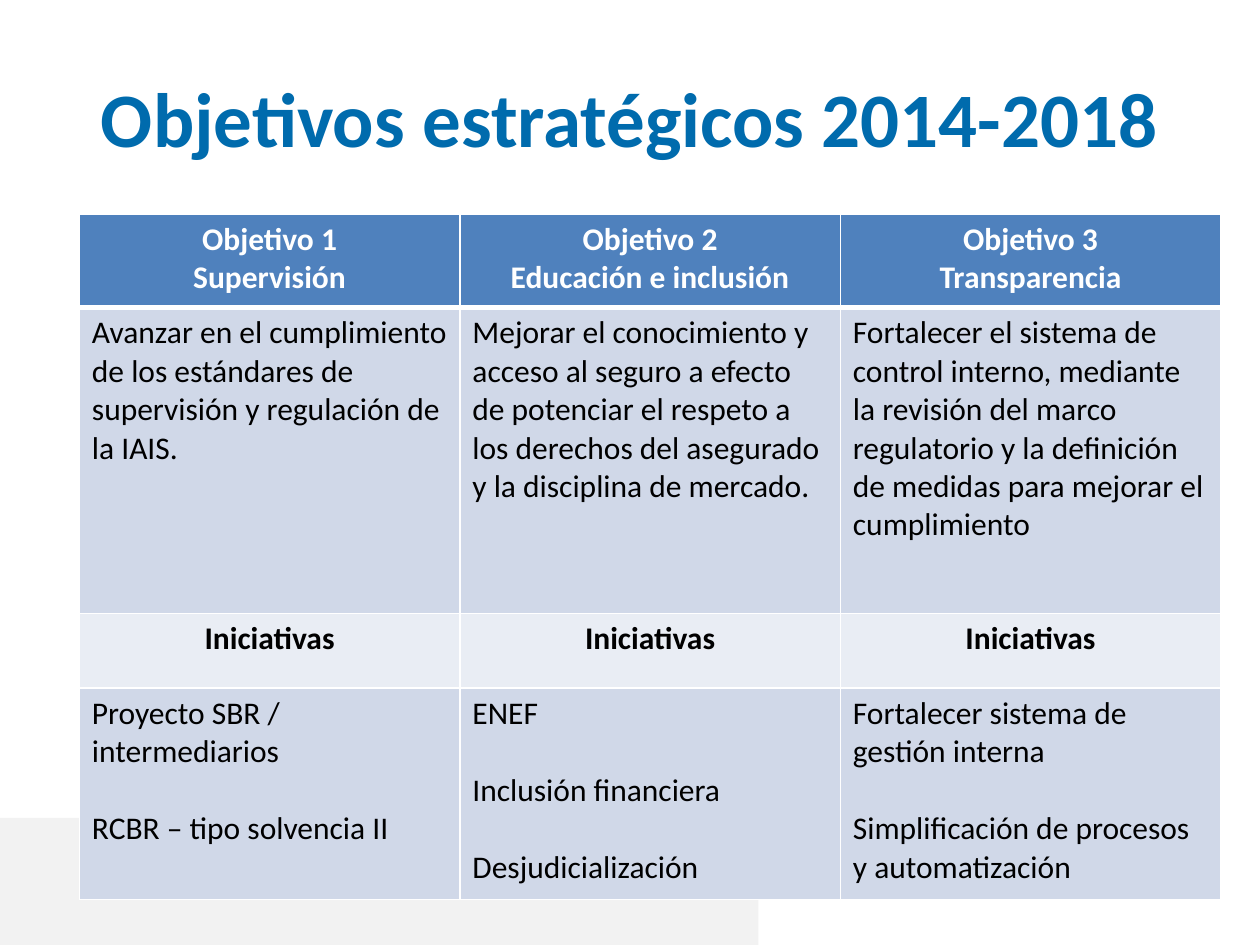
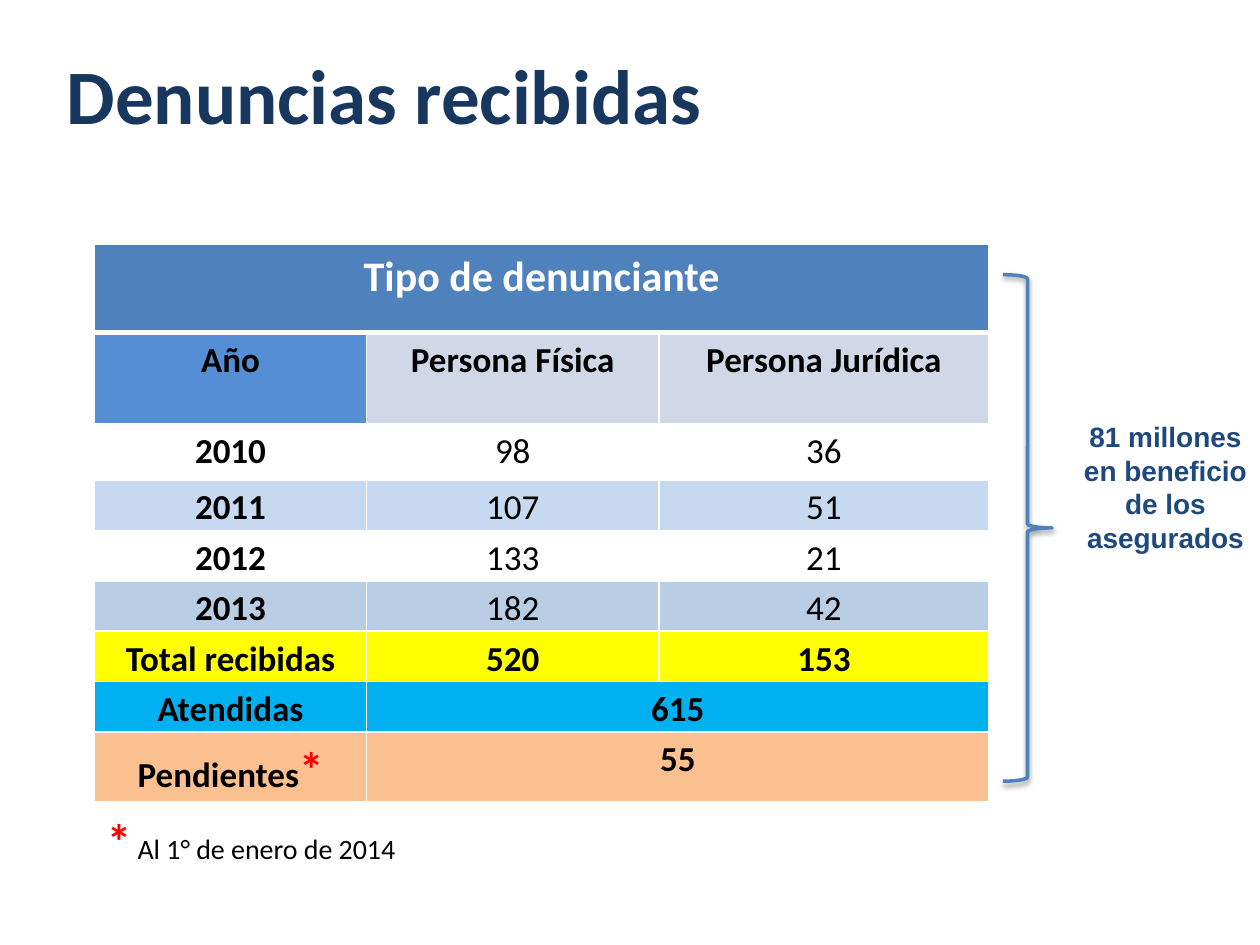
"""Build two slides on the goals and complaints of an insurance supervisor."""
from dataclasses import dataclass
from typing import Any, Optional

from lxml.etree import SubElement as Sub
from pptx import Presentation
from pptx.dml.color import RGBColor as Rgb
from pptx.enum.shapes import MSO_SHAPE as Form
from pptx.enum.text import MSO_ANCHOR as Anchor, PP_ALIGN as Align
from pptx.oxml.ns import qn
from pptx.util import Inches, Pt

WHITE = Rgb(0xFF, 0xFF, 0xFF)
BLACK = Rgb(0x00, 0x00, 0x00)
RED = Rgb(0xFF, 0x00, 0x00)
GRAY = Rgb(0xF2, 0xF2, 0xF2)
BRIGHT = Rgb(0x00, 0x6B, 0xAD)
NAVY = Rgb(0x17, 0x37, 0x5E)
INK = Rgb(0x1F, 0x49, 0x7D)
BLUE = Rgb(0x4F, 0x81, 0xBD)
MID = Rgb(0x55, 0x8E, 0xD5)
PALE = Rgb(0xD0, 0xD8, 0xE8)
FAINT = Rgb(0xE9, 0xED, 0xF4)
SKY = Rgb(0xC6, 0xD9, 0xF1)
STEEL = Rgb(0xB9, 0xCD, 0xE5)
YELLOW = Rgb(0xFF, 0xFF, 0x00)
CYAN = Rgb(0x00, 0xB0, 0xF0)
PEACH = Rgb(0xFA, 0xC0, 0x90)

GOALS = ("Objetivo 1\nSupervisión", "Objetivo 2\nEducación e inclusión", "Objetivo 3\nTransparencia")
AIMS = (
    "Avanzar en el cumplimiento de los estándares de supervisión y regulación de la IAIS.",
    "Mejorar el conocimiento y acceso al seguro a efecto de potenciar el respeto a "
    "los derechos del asegurado y la disciplina de mercado.",
    "Fortalecer el sistema de control interno, mediante la revisión del marco "
    "regulatorio y la definición de medidas para mejorar el cumplimiento",
)
PLANS = (
    "Proyecto SBR / intermediarios\nRCBR – tipo solvencia II",
    "ENEF\nInclusión financiera\nDesjudicialización",
    "Fortalecer sistema de gestión interna\nSimplificación de procesos y automatización",
)


@dataclass(frozen=True)
class Run:
    """A stretch of text in one format."""
    text: str
    size: float = 18
    color: Rgb = BLACK
    bold: bool = False
    name: str = "Calibri"


@dataclass(frozen=True)
class Text:
    """Paragraphs of runs with their shared layout."""
    paras: tuple[tuple[Run, ...], ...]
    align: Align = Align.LEFT
    gap: float = 0
    lead: float = 1.0


@dataclass(frozen=True)
class Cell:
    """A table cell with its fill and column span."""
    text: Text
    fill: Optional[Rgb] = None
    span: int = 1


@dataclass(frozen=True)
class Grid:
    """A table with its place, sizes and cells."""
    left: float
    top: float
    cols: tuple[float, ...]
    rows: tuple[float, ...]
    cells: list[list[Cell]]
    side: float = 0.1
    edge: float = 0.05


def put(item: Any, values: dict[str, Any]) -> None:
    """Set each named value on an item."""
    for key, value in values.items():
        setattr(item, key, value)


def write(frame: Any, text: Text) -> None:
    """Fill a text frame."""
    for num, runs in enumerate(text.paras):
        para = frame.add_paragraph() if num else frame.paragraphs[0]
        put(para, {"alignment": text.align, "line_spacing": text.lead})
        if num and text.gap:
            para.space_before = Pt(text.gap)
        for run in runs:
            part = para.add_run()
            part.text = run.text
            put(part.font, {"name": run.name, "size": Pt(run.size), "bold": run.bold})
            part.font.color.rgb = run.color


def add_text(slide: Any, box: tuple[float, ...], text: Text, anchor: Anchor = Anchor.TOP) -> None:
    """Place a wrapped text box."""
    frame = slide.shapes.add_textbox(*map(Inches, box)).text_frame
    put(frame, {"word_wrap": True, "vertical_anchor": anchor})
    write(frame, text)


def add_title(slide: Any, box: tuple[float, ...], words: str, color: Rgb, align: Align) -> None:
    """Place a slide title."""
    add_text(slide, box, Text(((Run(words, 44, color, True),),), align), Anchor.MIDDLE)


def add_edges(cell: Any, row: int) -> None:
    """Draw white cell borders, thick below the head row."""
    props = cell._tc.get_or_add_tcPr()
    for side in "LRTB":
        thick = (row, side) in ((0, "B"), (1, "T"))
        line = Sub(props, qn(f"a:ln{side}"), w=str(Pt(3 if thick else 1)))
        Sub(Sub(line, qn("a:solidFill")), qn("a:srgbClr"), val=str(WHITE))


def add_grid(slide: Any, grid: Grid) -> None:
    """Place a table."""
    size = map(Inches, (grid.left, grid.top, sum(grid.cols), sum(grid.rows)))
    table = slide.shapes.add_table(len(grid.rows), len(grid.cols), *size).table
    put(table, {"first_row": False, "horz_banding": False})
    for col, width in zip(table.columns, grid.cols):
        col.width = Inches(width)
    for row, height in zip(table.rows, grid.rows):
        row.height = Inches(height)
    side, edge = Inches(grid.side), Inches(grid.edge)
    pads = {"margin_left": side, "margin_right": side, "margin_top": edge, "margin_bottom": edge}
    for y, cells in enumerate(grid.cells):
        x = 0
        for item in cells:
            for step in range(item.span):
                cell = table.cell(y, x + step)
                put(cell, pads)
                add_edges(cell, y)
                if item.fill is None:
                    cell.fill.background()
                else:
                    cell.fill.solid()
                    cell.fill.fore_color.rgb = item.fill
            first = table.cell(y, x)
            if item.span > 1:
                first.merge(table.cell(y, x + item.span - 1))
            write(first.text_frame, item.text)
            x += item.span


def goal_row(words: tuple[str, ...], fill: Rgb, color: Rgb = BLACK,
             head: bool = False, gap: float = 0) -> list[Cell]:
    """Make a row of the goals table."""
    align = Align.CENTER if head else Align.LEFT
    return [Cell(Text(tuple((Run(line, 18, color, head),) for line in word.split("\n")), align, gap), fill)
            for word in words]


def count(*runs: Run, fill: Optional[Rgb] = None, span: int = 1) -> Cell:
    """Make a cell of the complaints table."""
    return Cell(Text((runs,), Align.CENTER, lead=1.15), fill, span)


def bold(words: str) -> Run:
    """Make a bold run for the complaints table."""
    return Run(words, 20, bold=True)


def year_row(year: str, people: str, firms: str, fill: Optional[Rgb] = None) -> list[Cell]:
    """Make a row of yearly counts."""
    return [count(bold(year), fill=fill)] + [count(Run(num, 20), fill=fill) for num in (people, firms)]


def add_brace(slide: Any) -> None:
    """Draw the brace beside the complaints table."""
    brace = slide.shapes.add_shape(Form.RIGHT_BRACE, *map(Inches, (7.96, 2.18, 0.39, 4.02)))
    brace.shadow.inherit = False
    brace.fill.background()
    brace.line.color.rgb = BLUE
    brace.line.width = Pt(2)
    glow = Sub(brace._element.spPr.find(qn("a:effectLst")), qn("a:outerShdw"),
               blurRad=str(Pt(3.1)), dist=str(Pt(1.6)), dir="5400000", rotWithShape="0")
    Sub(Sub(glow, qn("a:srgbClr"), val=str(BLACK)), qn("a:alpha"), val="38000")


def draw_goals(slide: Any) -> None:
    """Draw the goals slide."""
    band = slide.shapes.add_shape(Form.RECTANGLE, *map(Inches, (0, 6.49, 6.02, 1.01)))
    band.shadow.inherit = False
    band.fill.solid()
    band.fill.fore_color.rgb = GRAY
    band.line.fill.background()
    add_title(slide, (0.5, 0.3, 9, 1.25), "Objetivos estratégicos 2014-2018", BRIGHT, Align.CENTER)
    add_grid(slide, Grid(0.63, 1.7, (3.02,) * 3, (0.74, 2.43, 0.59, 1.68), [
        goal_row(GOALS, BLUE, WHITE, True),
        goal_row(AIMS, PALE),
        goal_row(("Iniciativas",) * 3, FAINT, head=True),
        goal_row(PLANS, PALE, gap=22),
    ]))


def draw_counts(slide: Any) -> None:
    """Draw the complaints slide."""
    star = Run("*", 28, RED, True)
    add_title(slide, (0.43, 0.44, 8.23, 0.6), "Denuncias recibidas", NAVY, Align.LEFT)
    add_grid(slide, Grid(0.75, 1.94, (2.16, 2.32, 2.62), (0.7, 0.72, 0.45) + (0.4,) * 5 + (0.55,), [
        [count(Run("Tipo de denunciante", 24, WHITE, True), fill=BLUE, span=3)],
        [count(bold(word), fill=fill) for word, fill in
         (("Año", MID), ("Persona Física", PALE), ("Persona Jurídica", PALE))],
        year_row("2010", "98", "36"),
        year_row("2011", "107", "51", SKY),
        year_row("2012", "133", "21"),
        year_row("2013", "182", "42", STEEL),
        [count(bold(word), fill=YELLOW) for word in ("Total recibidas", "520", "153")],
        [count(bold("Atendidas"), fill=CYAN), count(bold("615"), fill=CYAN, span=2)],
        [count(bold("Pendientes"), star, fill=PEACH), count(bold("55"), fill=PEACH, span=2)],
    ], 0.07, 0))
    add_text(slide, (0.75, 6.38, 4.65, 0.57), Text(((star, Run(" Al 1° de enero de 2014", 16)),)))
    note = Run("81 millones en beneficio de los asegurados", 16, INK, True, "Arial")
    add_text(slide, (8.5, 3.28, 1.5, 1.45), Text(((note,),), Align.CENTER))
    add_brace(slide)


def main() -> None:
    """Build and save the deck."""
    deck = Presentation()
    put(deck, {"slide_width": Inches(10), "slide_height": Inches(7.5)})
    for draw in (draw_goals, draw_counts):
        draw(deck.slides.add_slide(deck.slide_layouts[6]))
    deck.save("out.pptx")


if __name__ == "__main__":
    main()
